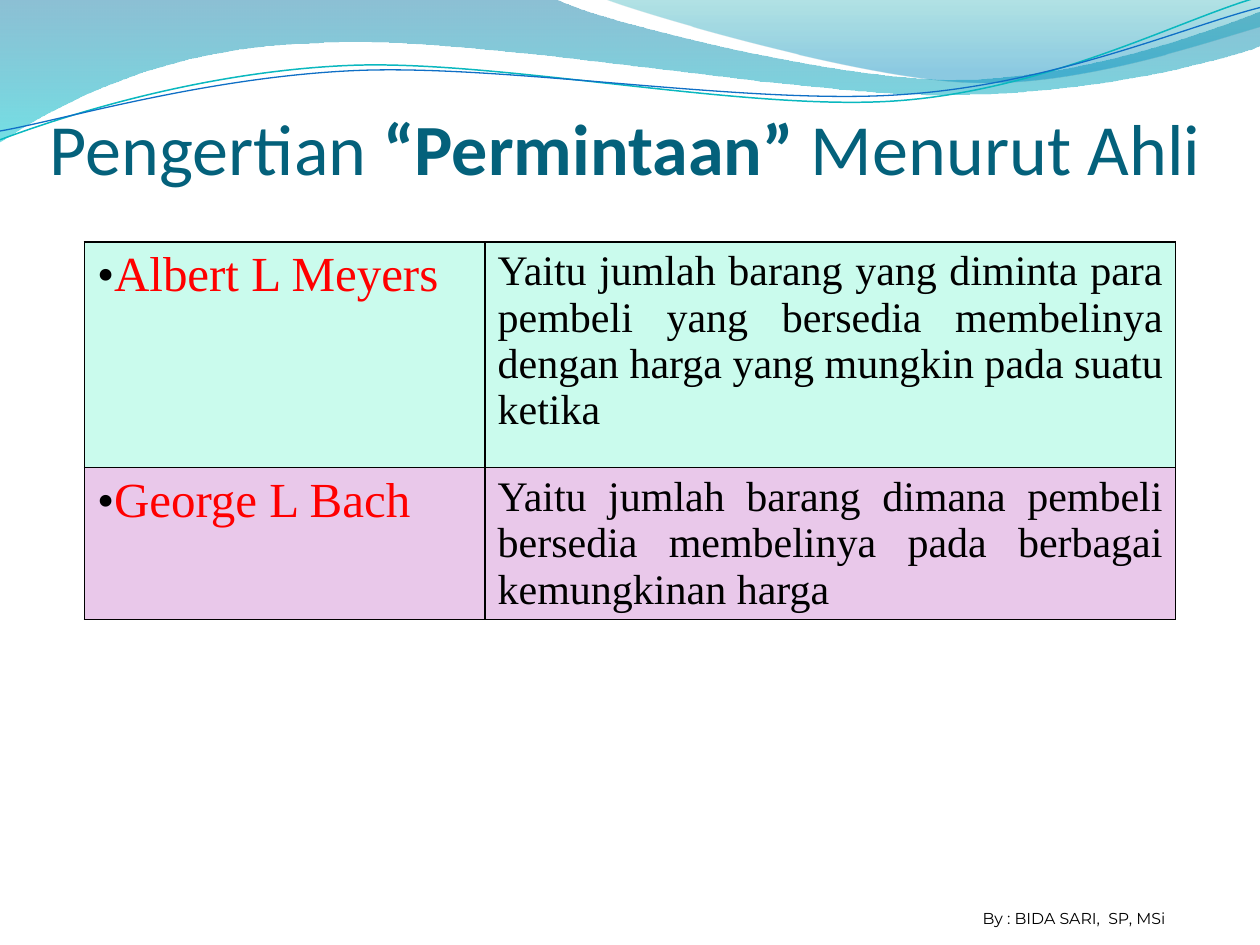
"""Build the slide on expert definitions of demand."""
from lxml.etree import SubElement
from pptx import Presentation
from pptx.dml.color import RGBColor
from pptx.enum.text import MSO_ANCHOR, MSO_AUTO_SIZE, PP_ALIGN
from pptx.oxml import parse_xml
from pptx.oxml.ns import nsdecls, qn
from pptx.util import Inches, Pt

COLORS = {
    "title": "04617B", "name": "FF0000", "ink": "000000",
    "mint": "CAFBED", "lilac": "E9C8EA",
    "teal_line": "0AB8BF", "blue_line": "0F6FC6",
}


def add_text(paragraph, text, size, font, color, bold=False, align=None):
    run = paragraph.add_run()
    run.text = text
    run.font.size = Pt(size)
    run.font.name = font
    run.font.bold = bold
    run.font.color.rgb = RGBColor.from_string(COLORS[color])
    if align is not None:
        paragraph.alignment = align


def add_wave(shapes, start, segments, closed):
    builder = shapes.build_freeform(Inches(start[0]), Inches(start[1]))
    for segment in segments:
        points = zip(segment[::2], segment[1::2])
        builder.add_line_segments([(Inches(x), Inches(y)) for x, y in points], close=False)
    if closed:
        builder.add_line_segments([], close=True)
    wave = builder.convert_to_shape()
    wave.shadow.inherit = False
    lines = iter(list(wave._element.iter(qn("a:lnTo"))))
    for segment in segments:
        pieces = [next(lines) for _ in segment[::2]]
        if len(pieces) == 3:
            curve = parse_xml(f'<a:cubicBezTo {nsdecls("a")}/>')
            pieces[0].addprevious(curve)
            for piece in pieces:
                curve.append(piece[0])
                piece.getparent().remove(piece)
    return wave


prs = Presentation()
prs.slide_width, prs.slide_height = Inches(10), Inches(7.5)
slide = prs.slides.add_slide(prs.slide_layouts[5])

bands = [
    ((0, 0), [
        (4.4, -0.01), (4.76, 0.17, 6.64, 0.63, 7.58, 0.63), (8.53, 0.63, 9.58, 0.26, 10, 0.09),
        (10.01, 0.36), (9.83, 0.44, 8.7, 0.76, 7.46, 0.75), (6.22, 0.75, 3.82, 0.28, 2.57, 0.34),
        (1.29, 0.36, 0.46, 0.83, -0.01, 1.13), (0, 0),
    ], [(0, "0074A1", 45), (100, "00C6CF", 55)]),
    ((4.79, -0.01), [
        (5.09, 0.11, 6.82, 0.62, 7.69, 0.65), (8.56, 0.69, 9.61, 0.32, 10, 0.21), (10, 0),
        (4.79, -0.01),
    ], [(0, "00A1A9", 30), (80, "008BBF", 45)]),
]
for start, segments, stops in bands:
    band = add_wave(slide.shapes, start, segments, True)
    band.line.fill.background()
    stop_xml = "".join(
        f'<a:gs pos="{position * 1000}"><a:srgbClr val="{color}">'
        f'<a:alpha val="{opacity * 1000}"/></a:srgbClr></a:gs>'
        for position, color, opacity in stops)
    gradient = parse_xml(
        f'<a:gradFill {nsdecls("a")} rotWithShape="1"><a:gsLst>{stop_xml}</a:gsLst>'
        '<a:lin ang="5400000" scaled="0"/></a:gradFill>')
    band._element.spPr.find(qn("a:custGeom")).addnext(gradient)

strands = [
    ((0, 1.11), [
        (0.48, 0.93, 1.58, 0.57, 2.77, 0.52), (3.95, 0.47, 5.93, 0.89, 7.13, 0.8),
        (8.33, 0.71, 9.38, 0.15, 9.98, -0.02),
    ], "teal_line", 0.85),
    ((0, 1.04), [
        (0.47, 0.96, 1.64, 0.61, 2.83, 0.56), (4.03, 0.51, 5.97, 0.84, 7.17, 0.75),
        (8.36, 0.67, 9.41, 0.21, 10, 0.06),
    ], "blue_line", 0.75),
]
for start, segments, color, width in strands:
    strand = add_wave(slide.shapes, start, segments, False)
    strand.fill.background()
    strand.line.color.rgb = RGBColor.from_string(COLORS[color])
    strand.line.width = Pt(width)

title = slide.shapes.title
title.left, title.top, title.width, title.height = map(Inches, (0.21, 0.77, 9.51, 0.78))
title.text_frame.auto_size = MSO_AUTO_SIZE.NONE
title.text_frame.vertical_anchor = MSO_ANCHOR.MIDDLE
for text, bold in (("Pengertian", False), (" “Permintaan” ", True), ("Menurut Ahli", False)):
    add_text(title.text_frame.paragraphs[0], text, size=41.25, font="Calibri",
             color="title", bold=bold, align=PP_ALIGN.CENTER)

definitions = [
    ("Albert L Meyers", "Yaitu jumlah barang yang diminta para pembeli yang bersedia membelinya "
     "dengan harga yang mungkin pada suatu ketika", "mint", 1.79),
    ("George L Bach", "Yaitu jumlah barang dimana pembeli bersedia membelinya pada berbagai "
     "kemungkinan harga", "lilac", 1.2),
]
table = slide.shapes.add_table(
    len(definitions), 2, Inches(0.67), Inches(1.92), Inches(8.66), Inches(2.99)).table
table.first_row = table.horz_banding = False
for column, width in zip(table.columns, (3.18, 5.48)):
    column.width = Inches(width)
for row, (expert, definition, color, height) in zip(table.rows, definitions):
    row.height = Inches(height)
    expert_cell, definition_cell = row.cells
    for cell in row.cells:
        properties = cell._tc.get_or_add_tcPr()
        for side in ("lnL", "lnR", "lnT", "lnB"):
            border = SubElement(properties, qn(f"a:{side}"), w=str(Pt(1)))
            SubElement(SubElement(border, qn("a:solidFill")), qn("a:srgbClr"), val=COLORS["ink"])
        cell.fill.solid()
        cell.fill.fore_color.rgb = RGBColor.from_string(COLORS[color])
    expert_line = expert_cell.text_frame.paragraphs[0]
    add_text(expert_line, expert, size=28, font="Times New Roman", color="name", align=PP_ALIGN.JUSTIFY)
    bullet = expert_line._p.get_or_add_pPr()
    SubElement(SubElement(bullet, qn("a:buClr")), qn("a:srgbClr"), val=COLORS["ink"])
    SubElement(bullet, qn("a:buFont"), typeface="Times New Roman")
    SubElement(bullet, qn("a:buChar"), char="•")
    add_text(definition_cell.text_frame.paragraphs[0], definition, size=24,
             font="Times New Roman", color="ink", align=PP_ALIGN.JUSTIFY)

author = slide.shapes.add_textbox(Inches(7.7), Inches(7.16), Inches(1.87), Inches(0.25)).text_frame
author.word_wrap = False
author.auto_size = MSO_AUTO_SIZE.SHAPE_TO_FIT_TEXT
add_text(author.paragraphs[0], "By : BIDA SARI,  SP, MSi", size=9, font="Montserrat", color="ink")

prs.save("out.pptx")
